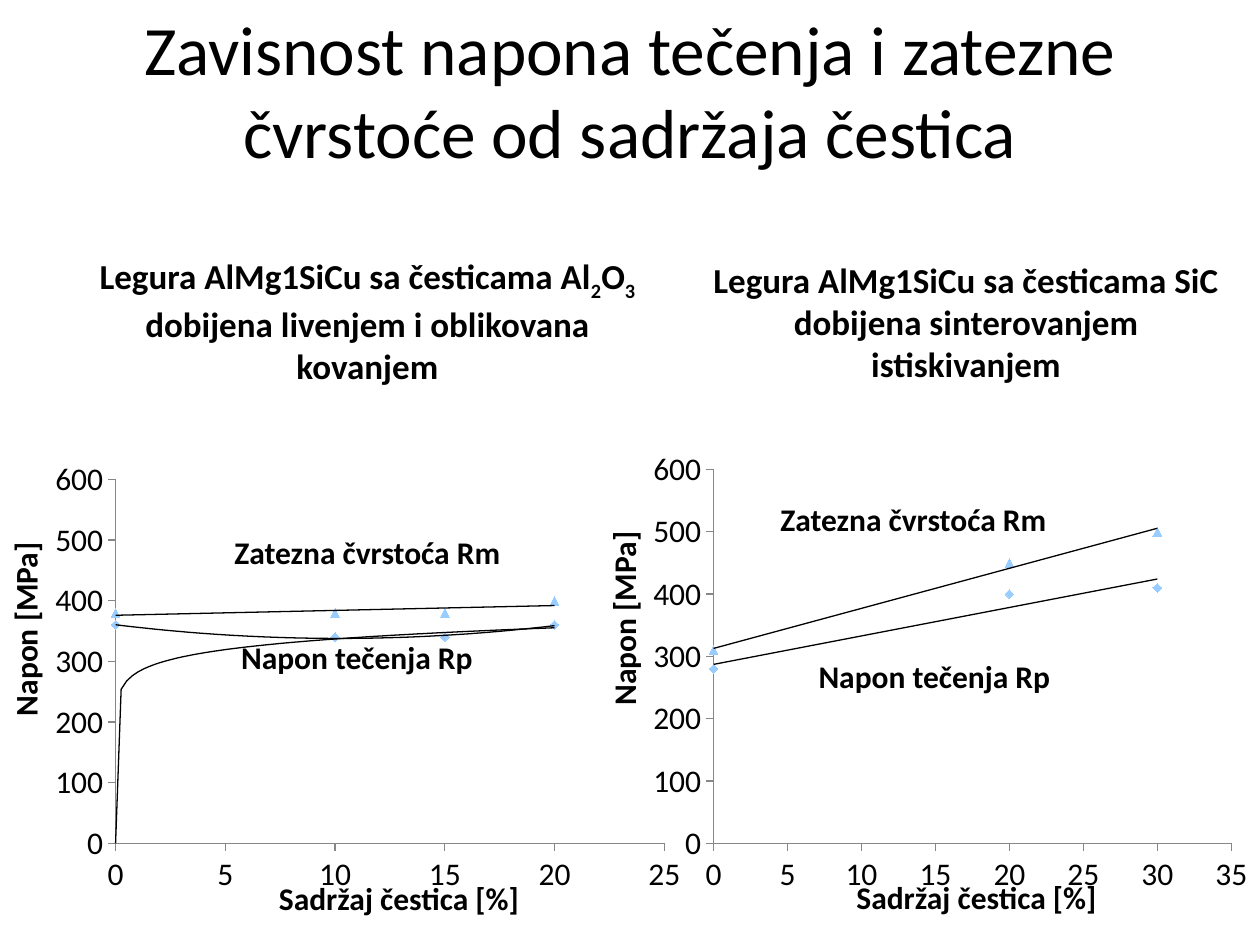
"""Build a slide with two scatter charts of yield and tensile strength against particle content."""
from dataclasses import dataclass
from typing import Any

import pptx
import pptx.chart.data
import pptx.dml.color
import pptx.enum.chart
import pptx.enum.text
import pptx.oxml
import pptx.oxml.ns
import pptx.util

Pt = pptx.util.Pt
RGB = pptx.dml.color.RGBColor
Marker = pptx.enum.chart.XL_MARKER_STYLE


@dataclass(frozen=True)
class Theme:
    """Colours, font and type sizes of the slide."""

    font: str = "Calibri"
    ink: RGB = RGB(0, 0, 0)
    axis: RGB = RGB(0x87, 0x87, 0x87)
    marker: RGB = RGB(0x99, 0xCC, 0xFF)
    title: float = 39.6
    heading: float = 20
    label: float = 18
    chart: float = 10


@dataclass(frozen=True)
class Box:
    """A rectangle in points."""

    left: float
    top: float
    width: float
    height: float

    def emu(self) -> tuple:
        """Return the rectangle as lengths."""
        return tuple(Pt(v) for v in (self.left, self.top, self.width, self.height))


@dataclass(frozen=True)
class Label:
    """Bold text whose odd-numbered runs are subscripts."""

    box: Box
    runs: tuple[str, ...]
    size: float
    vertical: bool = False


@dataclass(frozen=True)
class Series:
    """Measured strengths with the kinds of their trend lines."""

    name: str
    values: tuple[float, ...]
    marker: Any
    trends: tuple[str, ...] = ("linear",)


@dataclass(frozen=True)
class Panel:
    """One scatter chart with its plot area and axis limit."""

    box: Box
    plot: Box
    x_max: float
    contents: tuple[float, ...]
    series: tuple[Series, ...]


THEME = Theme()
TENSILE, YIELD = ("Zatezna čvrstoća Rm",), ("Napon tečenja Rp",)
STRESS, CONTENT = ("Napon [MPa]",), ("Sadržaj čestica [%]",)

PANELS = (
    Panel(Box(24, 258, 372, 258), Box(66, 274, 313.7, 208), 25, (0, 10, 15, 20), (
        Series("Series 1", (360, 340, 340, 360), Marker.DIAMOND, ("power", "poly")),
        Series("Series 2", (380, 380, 380, 400), Marker.TRIANGLE))),
    Panel(Box(366, 252, 354, 264), Box(407.7, 268.4, 296, 213.7), 35, (0, 20, 30), (
        Series("Series 1", (280, 400, 410), Marker.DIAMOND),
        Series("Series 2", (310, 450, 500), Marker.TRIANGLE))),
)

LABELS = (
    Label(Box(48, 142, 324, 80), ("Legura AlMg1SiCu sa česticama Al", "2", "O", "3",
          " dobijena livenjem i oblikovana kovanjem"), THEME.heading),
    Label(Box(396, 144, 312, 80), ("Legura AlMg1SiCu sa česticama SiC dobijena "
          "sinterovanjem istiskivanjem",), THEME.heading),
    Label(Box(120, 301, 180, 29), TENSILE, THEME.label),
    Label(Box(432, 282, 180, 29), TENSILE, THEME.label),
    Label(Box(114, 361, 180, 29), YIELD, THEME.label),
    Label(Box(444, 372, 180, 29), YIELD, THEME.label),
    Label(Box(150, 499, 156, 29), CONTENT, THEME.label),
    Label(Box(480, 498, 156, 29), CONTENT, THEME.label),
    Label(Box(0, 294, 36, 131), STRESS, THEME.label, True),
    Label(Box(342, 288, 36, 131), STRESS, THEME.label, True),
)


def style_font(font: Any, size: float, bold: bool = False) -> None:
    """Apply the theme font at a size."""
    font.name, font.size, font.bold = THEME.font, Pt(size), bold
    font.color.rgb = THEME.ink


def add_title(s: Any, text: str, box: Box) -> None:
    """Fill and place the title placeholder."""
    sp = s.shapes.title
    sp.left, sp.top, sp.width, sp.height = box.emu()
    tf = sp.text_frame
    tf.text = text
    tf.vertical_anchor = pptx.enum.text.MSO_ANCHOR.MIDDLE
    p = tf.paragraphs[0]
    p.alignment = pptx.enum.text.PP_ALIGN.CENTER
    style_font(p.font, THEME.title)


def add_label(s: Any, label: Label) -> None:
    """Draw a centred bold label."""
    tf = s.shapes.add_textbox(*label.box.emu()).text_frame
    tf.word_wrap = True
    tf.auto_size = pptx.enum.text.MSO_AUTO_SIZE.SHAPE_TO_FIT_TEXT
    if label.vertical:
        tf._txBody.bodyPr.set("vert", "vert270")
    p = tf.paragraphs[0]
    p.alignment = pptx.enum.text.PP_ALIGN.CENTER
    style_font(p.font, label.size, True)
    for i, text in enumerate(label.runs):
        r = p.add_run()
        r.text = text
        if i % 2:
            r.font._element.set("baseline", "-25000")


def chart_xml(tag: str, body: str) -> Any:
    """Parse a chart element."""
    ns = pptx.oxml.ns.nsdecls("c", "a")
    return pptx.oxml.parse_xml(f"<c:{tag} {ns}>{body}</c:{tag}>")


def add_trend(series: Any, kind: str) -> None:
    """Add a thin trend line to a series."""
    order = '<c:order val="2"/>' if kind == "poly" else ""
    line = (f'<c:spPr><a:ln w="{Pt(0.75)}"><a:solidFill><a:srgbClr val="{THEME.ink}"/>'
            "</a:solidFill></a:ln></c:spPr>")
    trend = chart_xml("trendline", f'{line}<c:trendlineType val="{kind}"/>{order}'
                      '<c:dispRSqr val="0"/><c:dispEq val="0"/>')
    series._element.find(pptx.oxml.ns.qn("c:xVal")).addprevious(trend)


def place_plot(chart: Any, panel: Panel) -> None:
    """Fix the inner plot area inside its chart."""
    box, plot = panel.box, panel.plot
    shares = {"x": (plot.left - box.left) / box.width, "y": (plot.top - box.top) / box.height,
              "w": plot.width / box.width, "h": plot.height / box.height}
    modes = "".join(f'<c:{k}Mode val="edge"/>' for k in "xy")
    sizes = "".join(f'<c:{k} val="{v:.3f}"/>' for k, v in shares.items())
    layout = chart_xml("layout", '<c:manualLayout><c:layoutTarget val="inner"/>'
                       f"{modes}{sizes}</c:manualLayout>")
    area = chart._chartSpace.chart.plotArea
    for old in area.findall(pptx.oxml.ns.qn("c:layout")):
        area.remove(old)
    area.insert(0, layout)


def style_axis(axis: Any, maximum: float, unit: float) -> None:
    """Set scale, ticks and font of an axis."""
    axis.minimum_scale, axis.maximum_scale, axis.major_unit = 0, maximum, unit
    axis.has_major_gridlines = False
    axis.major_tick_mark = pptx.enum.chart.XL_TICK_MARK.OUTSIDE
    axis.format.line.color.rgb = THEME.axis
    axis.format.line.width = Pt(0.75)
    style_font(axis.tick_labels.font, THEME.label)


def add_panel(s: Any, panel: Panel) -> None:
    """Draw a scatter chart with trend lines."""
    data = pptx.chart.data.XyChartData()
    for row in panel.series:
        points = data.add_series(row.name)
        for x, y in zip(panel.contents, row.values):
            points.add_data_point(x, y)
    kind = pptx.enum.chart.XL_CHART_TYPE.XY_SCATTER
    chart = s.shapes.add_chart(kind, *panel.box.emu(), data).chart
    chart.has_legend = chart.has_title = False
    style_font(chart.font, THEME.chart)
    chart.plots[0].vary_by_categories = False
    style_axis(chart.category_axis, panel.x_max, 5)
    style_axis(chart.value_axis, 600, 100)
    place_plot(chart, panel)
    for series, row in zip(chart.plots[0].series, panel.series):
        series.smooth = False
        series.format.line.fill.background()
        series.marker.style, series.marker.size = row.marker, 5
        series.marker.format.fill.solid()
        series.marker.format.fill.fore_color.rgb = THEME.marker
        series.marker.format.line.color.rgb = THEME.marker
        for trend in row.trends:
            add_trend(series, trend)


def main() -> None:
    """Build and save the slide."""
    prs = pptx.Presentation()
    prs.slide_width, prs.slide_height = Pt(720), Pt(540)
    s = prs.slides.add_slide(prs.slide_layouts[5])
    add_title(s, "Zavisnost napona tečenja i zatezne čvrstoće od sadržaja čestica",
              Box(36, 6, 648, 90))
    for panel in PANELS:
        add_panel(s, panel)
    for label in LABELS:
        add_label(s, label)
    prs.save("out.pptx")


if __name__ == "__main__":
    main()
